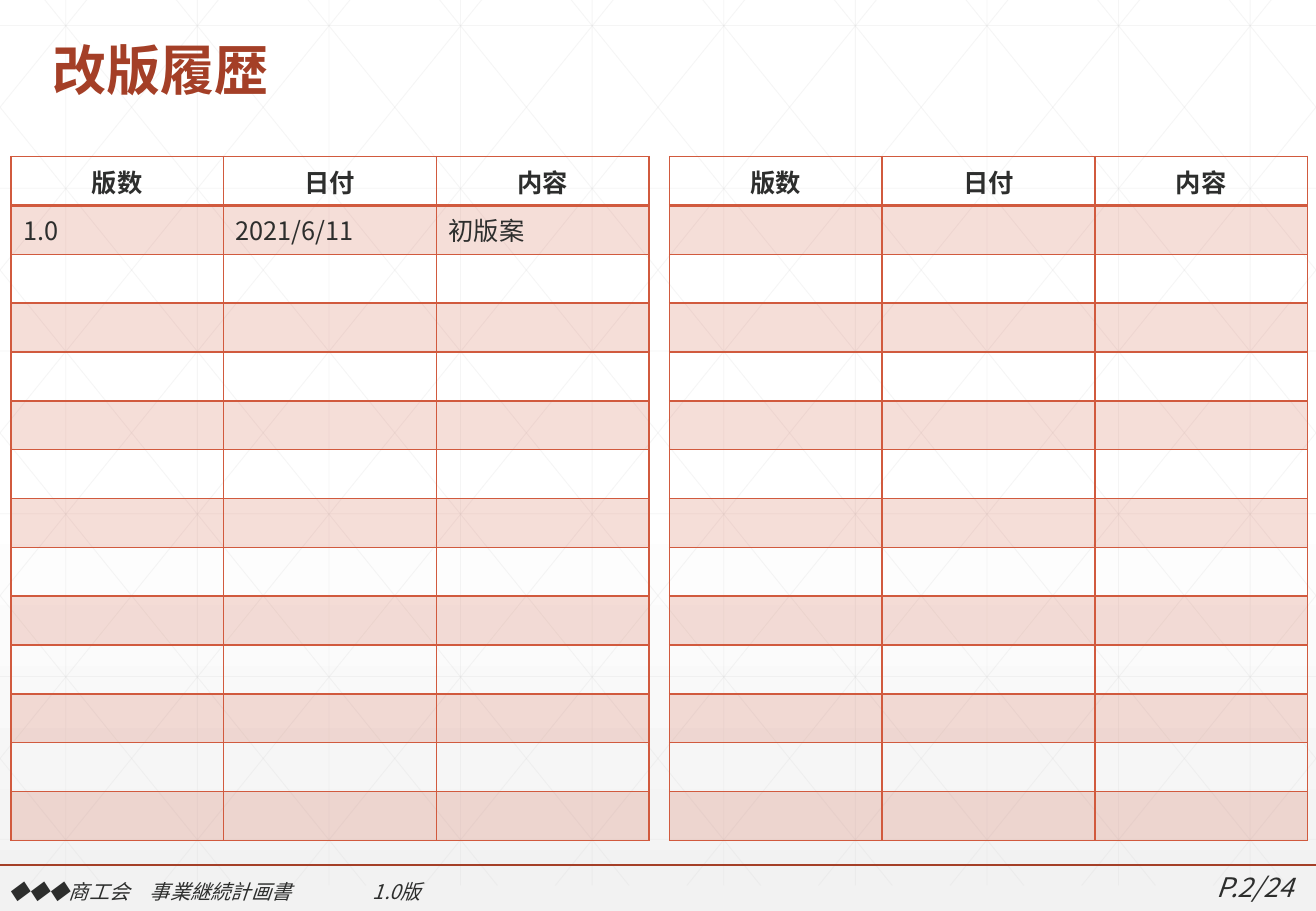
from copy import deepcopy
from lxml.etree import SubElement
from pptx import Presentation
from pptx.dml.color import RGBColor
from pptx.enum.shapes import MSO_CONNECTOR
from pptx.enum.text import MSO_ANCHOR, PP_ALIGN
from pptx.oxml.ns import qn
from pptx.util import Inches, Pt

TITLE = "改版履歴"
HEADER = ("版数", "日付", "内容")
HISTORY = [("1.0", "2021/6/11", "初版案")]
FOOTER = "◆◆◆商工会　事業継続計画書\t1.0版"
PAGE = "P.2/24"

FONT = "Noto Sans CJK JP"
WHITE = RGBColor(0xFF, 0xFF, 0xFF)
PALE = RGBColor(0xF2, 0xF2, 0xF2)
MESH = RGBColor(0xD9, 0xD9, 0xD9)
DARK = RGBColor(0x2D, 0x2E, 0x2D)
RUST = RGBColor(0xA4, 0x3F, 0x27)
CORAL = RGBColor(0xD1, 0x5A, 0x3E)

W, H = 10.83, 7.5
ROWS, TABLE_TOP, TABLE_W, TABLE_H = 14, 1.29, 5.25, 5.63
TABLE_LEFTS = (0.09, 5.51)
MESH_TOP, MESH_BOTTOM, MESH_COLS = -0.21, 7.29, 10
MESH_STEP, MESH_ROW, MESH_RUN = W / MESH_COLS, 1.34, 6.06
NO_STYLE = "{2D5ABB26-0587-4C30-8999-92F81FD0307C}"


def set_alpha(fill, percent):
    SubElement(fill[0], qn("a:alpha"), val=str(percent * 1000))


def add_line(slide, x1, y1, x2, y2, color, width, alpha=None):
    ends = (Inches(v) for v in (x1, y1, x2, y2))
    ln = slide.shapes.add_connector(MSO_CONNECTOR.STRAIGHT, *ends)
    ln.line.color.rgb = color
    ln.line.width = Pt(width)
    sp_pr = ln._element.spPr
    if alpha:
        set_alpha(sp_pr.find(qn("a:ln")).find(qn("a:solidFill")), alpha)
    SubElement(sp_pr, qn("a:effectLst"))


def write(tf, text, size, color=DARK, bold=False, italic=False, align=PP_ALIGN.LEFT):
    p = tf.paragraphs[0]
    p.alignment = align
    if not text:
        SubElement(p._p, qn("a:endParaRPr"), sz=str(size * 100))
        return p
    r = p.add_run()
    r.text = text
    r.font.name, r.font.size = FONT, Pt(size)
    r.font.bold, r.font.italic = bold, italic
    r.font.color.rgb = color
    SubElement(r._r.get_or_add_rPr(), qn("a:ea"), typeface=FONT)
    return p


def add_label(slide, x, y, w, h, text, size, **fmt):
    tf = slide.shapes.add_textbox(Inches(x), Inches(y), Inches(w), Inches(h)).text_frame
    tf.word_wrap = True
    return write(tf, text, size, italic=True, **fmt)


def set_borders(cell, widths):
    tc_pr = cell._tc.get_or_add_tcPr()
    for i, (side, width) in enumerate(zip("LRTB", widths)):
        ln = SubElement(tc_pr, qn(f"a:ln{side}"), w=str(Pt(width)))
        SubElement(SubElement(ln, qn("a:solidFill")), qn("a:srgbClr"), val=str(CORAL))
        tc_pr.insert(i, ln)


def add_history(slide, left, records):
    box = (Inches(v) for v in (left, TABLE_TOP, TABLE_W, TABLE_H))
    table = slide.shapes.add_table(ROWS, len(HEADER), *box).table
    table.horz_banding = False
    table._tbl.tblPr.find(qn("a:tableStyleId")).text = NO_STYLE
    grid = [HEADER, *records]
    for i, row in enumerate(table.rows):
        row.height = Inches(TABLE_H / ROWS)
        for j, cell in enumerate(row.cells):
            text = grid[i][j] if i < len(grid) else ""
            align = PP_ALIGN.CENTER if i == 0 else PP_ALIGN.LEFT
            write(cell.text_frame, text, 15, bold=i == 0, align=align)
            if i % 2:
                cell.fill.solid()
                cell.fill.fore_color.rgb = CORAL
                set_alpha(cell._tc.tcPr.find(qn("a:solidFill")), 20)
            else:
                cell.fill.background()
            set_borders(cell, (1, 1, 2 if i == 1 else 1, 2 if i == 0 else 1))


def add_background(slide):
    fill = slide.background.fill
    fill.gradient()
    fill.gradient_angle = 270
    first, last = fill.gradient_stops
    first.color.rgb, last.color.rgb = WHITE, PALE
    first.position, last.position = 0, 1
    middle = deepcopy(first._gs)
    middle.set("pos", "53000")
    first._gs.addnext(middle)


def add_mesh(slide):
    slope = (MESH_BOTTOM - MESH_TOP) / MESH_RUN
    lines = []
    for i in range(MESH_COLS):
        x = (i + 0.5) * MESH_STEP
        lines.append((x, MESH_TOP, x, MESH_BOTTOM))
    for i in range(6):
        y = 0.21 + i * MESH_ROW
        lines.append((0, y, W, y))
    for i in range(-5, MESH_COLS):
        x = 0.2 + i * MESH_STEP
        x1, x2 = max(x, 0), min(x + MESH_RUN, W)
        y1, y2 = (MESH_TOP + (v - x) * slope for v in (x1, x2))
        lines += [(x1, y1, x2, y2), (W - x1, y1, W - x2, y2)]
    for line in lines:
        add_line(slide, *line, MESH, 0.5, alpha=25)


def main():
    prs = Presentation()
    prs.slide_width, prs.slide_height = Inches(W), Inches(H)
    slide = prs.slides.add_slide(prs.slide_layouts[5])
    add_background(slide)
    add_mesh(slide)

    add_line(slide, 0, 7.12, W, 7.12, RUST, 1)
    add_label(slide, 9.17, 7.12, 1.57, 0.37, PAGE, 16, align=PP_ALIGN.RIGHT)
    p = add_label(slide, -0.03, 7.19, 5.27, 0.3, FOOTER, 12)
    tabs = SubElement(p._p.get_or_add_pPr(), qn("a:tabLst"))
    SubElement(tabs, qn("a:tab"), pos=str(Inches(3)), algn="l")

    title = slide.shapes.title
    title.left, title.top = Inches(0.33), Inches(0.16)
    title.width, title.height = Inches(10.15), Inches(0.73)
    title.text_frame.vertical_anchor = MSO_ANCHOR.BOTTOM
    write(title.text_frame, TITLE, 32, color=RUST, bold=True).line_spacing = 0.9
    slide.shapes._spTree.append(title._element)

    for left, records in zip(TABLE_LEFTS, (HISTORY, [])):
        add_history(slide, left, records)
    prs.save("out.pptx")


if __name__ == "__main__":
    main()
